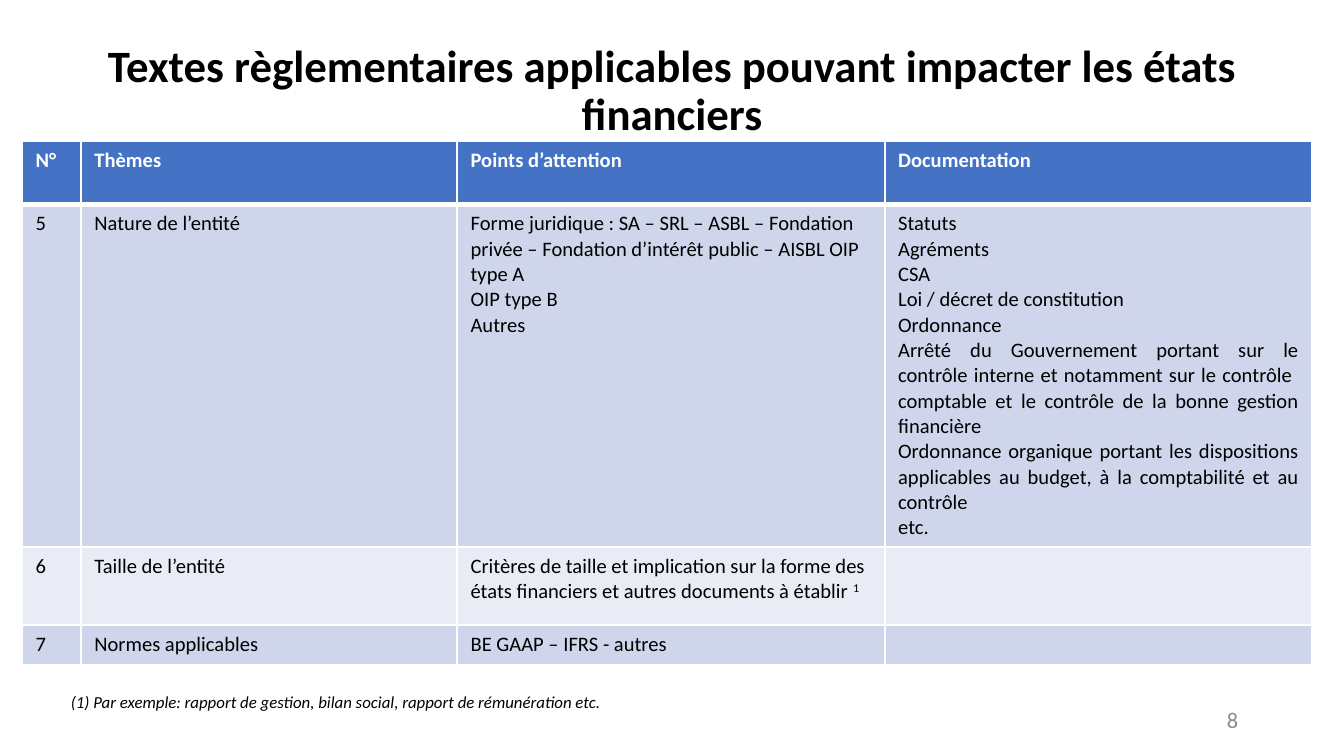
from dataclasses import dataclass

from lxml import etree
from pptx import Presentation
from pptx.dml.color import RGBColor
from pptx.enum.text import MSO_ANCHOR, PP_ALIGN
from pptx.oxml.ns import qn
from pptx.util import Cm, Pt

LEFT, CENTER, RIGHT, JUSTIFY = PP_ALIGN.LEFT, PP_ALIGN.CENTER, PP_ALIGN.RIGHT, PP_ALIGN.JUSTIFY
TOP, MIDDLE = MSO_ANCHOR.TOP, MSO_ANCHOR.MIDDLE

BLACK = RGBColor(0x00, 0x00, 0x00)
WHITE = RGBColor(0xFF, 0xFF, 0xFF)
GREY = RGBColor(0x8C, 0x8C, 0x8C)
HEADER_BLUE = RGBColor(0x44, 0x72, 0xC4)
BANDS = (RGBColor(0xCF, 0xD5, 0xEA), RGBColor(0xE9, 0xEB, 0xF5))

TITLE_FONT = {"name": "Calibri", "size": Pt(24), "bold": True}
HEADER_FONT = {"name": "Calibri", "size": Pt(11), "bold": True}
BODY_FONT = {"name": "Calibri", "size": Pt(11), "bold": False}
NOTE_FONT = {"name": "Calibri", "size": Pt(9), "italic": True}
NUMBER_FONT = {"name": "Calibri", "size": Pt(12)}

COLUMN_WIDTHS = (1.11, 7.11, 8.08, 8.08)
THIN, THICK = Pt(1), Pt(3)


@dataclass
class Caption:
    text: str
    box: tuple[float, float, float, float]
    font: dict
    color: RGBColor
    align: PP_ALIGN = LEFT
    anchor: MSO_ANCHOR = TOP
    line_spacing: float = 1.0


@dataclass
class Topic:
    height: float
    number: str
    theme: str
    attention: tuple[str, ...]
    documentation: tuple[str, ...] = ()
    note_mark: str = ""


CAPTIONS = (
    Caption("Textes règlementaires applicables pouvant impacter les états financiers",
            (1.75, 0.36, 21.9, 2.77), TITLE_FONT, BLACK, CENTER, MIDDLE, 0.9),
    Caption("8", (17.93, 13.23, 5.72, 0.76), NUMBER_FONT, GREY, RIGHT, MIDDLE),
    Caption("(1) Par exemple: rapport de gestion, bilan social, rapport de rémunération etc.",
            (1.09, 12.95, 23.04, 1.02), NOTE_FONT, BLACK),
)

TOPICS = (
    Topic(1.19, "N°", "Thèmes", ("Points d’attention",), ("Documentation",)),
    Topic(6.48, "5", "Nature de l’entité",
          ("Forme juridique : SA – SRL – ASBL – Fondation privée – Fondation d’intérêt public – AISBL OIP type A",
           "OIP type B", "Autres"),
          ("Statuts", "Agréments", "CSA", "Loi / décret de constitution", "Ordonnance",
           "Arrêté du Gouvernement portant sur le contrôle interne et notamment sur le contrôle  "
           "comptable et le contrôle de la bonne gestion financière",
           "Ordonnance organique portant les dispositions applicables au budget, à la comptabilité "
           "et au contrôle",
           "etc.")),
    Topic(1.47, "6", "Taille de l’entité",
          ("Critères de taille et implication sur la forme des états financiers et autres documents à établir ",),
          note_mark="1"),
    Topic(0.76, "7", "Normes applicables", ("BE GAAP – IFRS - autres",)),
)


def add_run(paragraph, text: str, font: dict, color: RGBColor):
    run = paragraph.add_run()
    run.text = text
    for attribute, value in font.items():
        setattr(run.font, attribute, value)
    run.font.color.rgb = color
    return run


def add_caption(slide, caption: Caption) -> None:
    frame = slide.shapes.add_textbox(*map(Cm, caption.box)).text_frame
    frame.word_wrap = True
    frame.vertical_anchor = caption.anchor
    paragraph = frame.paragraphs[0]
    paragraph.alignment = caption.align
    paragraph.line_spacing = caption.line_spacing
    add_run(paragraph, caption.text, caption.font, caption.color)


def set_borders(cell, top: int, bottom: int) -> None:
    properties = cell._tc.get_or_add_tcPr()
    widths = {"a:lnL": THIN, "a:lnR": THIN, "a:lnT": top, "a:lnB": bottom}
    for position, (side, width) in enumerate(widths.items()):
        line = etree.Element(qn(side), w=str(width))
        fill = etree.SubElement(line, qn("a:solidFill"))
        etree.SubElement(fill, qn("a:srgbClr"), val=str(WHITE))
        properties.insert(position, line)


def fill_cell(cell, lines: tuple[str, ...], font: dict, color: RGBColor, align: PP_ALIGN) -> None:
    frame = cell.text_frame
    for index, line in enumerate(lines):
        paragraph = frame.add_paragraph() if index else frame.paragraphs[0]
        paragraph.alignment = align
        add_run(paragraph, line, font, color)
    if not lines:
        ending = frame.paragraphs[0]._p.get_or_add_endParaRPr()
        ending.set("sz", str(int(font["size"].pt * 100)))


def add_topic_table(slide, topics: tuple[Topic, ...]) -> None:
    heights = [topic.height for topic in topics]
    table = slide.shapes.add_table(
        len(topics), len(COLUMN_WIDTHS), Cm(0.42), Cm(2.67),
        Cm(sum(COLUMN_WIDTHS)), Cm(sum(heights))).table
    table.horz_banding = False
    for column, width in zip(table.columns, COLUMN_WIDTHS):
        column.width = Cm(width)
    for index, (row, topic) in enumerate(zip(table.rows, topics)):
        row.height = Cm(topic.height)
        is_header = index == 0
        font, color = (HEADER_FONT, WHITE) if is_header else (BODY_FONT, BLACK)
        contents = ((topic.number,), (topic.theme,), topic.attention, topic.documentation)
        aligns = (LEFT, LEFT, LEFT, LEFT if is_header else JUSTIFY)
        for cell, lines, align in zip(row.cells, contents, aligns):
            fill_cell(cell, lines, font, color, align)
            cell.fill.solid()
            cell.fill.fore_color.rgb = HEADER_BLUE if is_header else BANDS[(index - 1) % 2]
            set_borders(cell, THICK if index == 1 else THIN, THICK if is_header else THIN)
        if topic.note_mark:
            mark = add_run(row.cells[2].text_frame.paragraphs[-1], topic.note_mark, font, color)
            mark._r.get_or_add_rPr().set("baseline", "30000")


def main() -> None:
    """Build the slide on regulatory texts that affect financial statements."""
    presentation = Presentation()
    presentation.slide_width, presentation.slide_height = Cm(25.4), Cm(14.29)
    slide = presentation.slides.add_slide(presentation.slide_layouts[6])
    add_topic_table(slide, TOPICS)
    for caption in CAPTIONS:
        add_caption(slide, caption)
    presentation.save("out.pptx")


if __name__ == "__main__":
    main()
